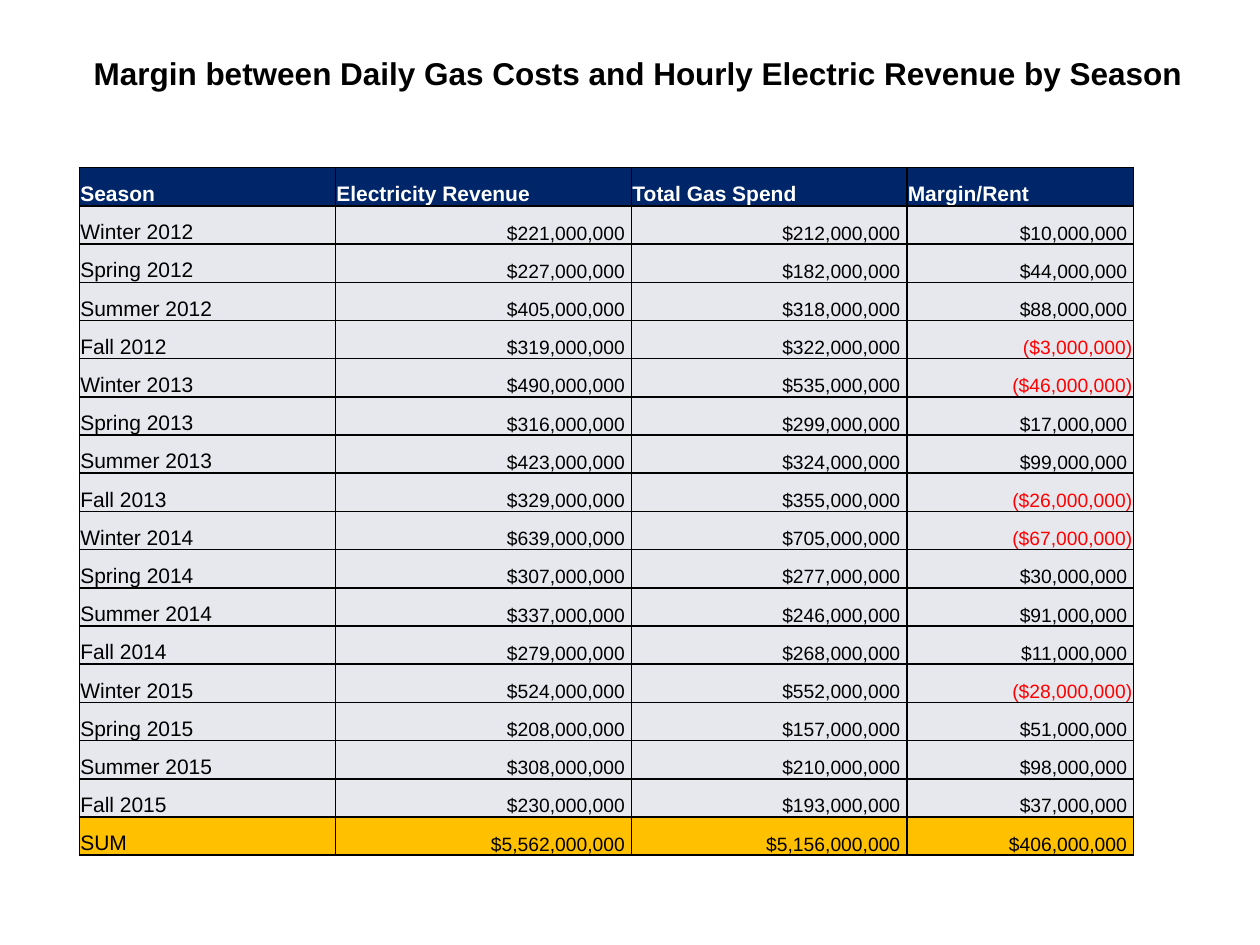
from dataclasses import dataclass

from lxml import etree
from pptx import Presentation
from pptx.dml.color import RGBColor
from pptx.enum.text import MSO_ANCHOR, PP_ALIGN
from pptx.oxml.ns import qn
from pptx.util import Cm, Pt

LEFT, CENTER, RIGHT = PP_ALIGN.LEFT, PP_ALIGN.CENTER, PP_ALIGN.RIGHT
TOP, BOTTOM = MSO_ANCHOR.TOP, MSO_ANCHOR.BOTTOM
BORDER_SIDES = ("a:lnL", "a:lnR", "a:lnT", "a:lnB")


@dataclass(frozen=True)
class Theme:
    font: str = "Arial"
    title_size: int = 18
    label_size: int = 12
    value_size: int = 11
    black: str = "000000"
    white: str = "FFFFFF"
    negative: str = "FF0000"
    header_fill: str = "00266A"
    body_fill: str = "E7E8EE"
    total_fill: str = "FFC000"


TITLE = "Margin between Daily Gas Costs and Hourly Electric Revenue by Season"
HEADERS = ("Season", "Electricity Revenue", "Total Gas Spend", "Margin/Rent")
COLUMN_WIDTHS = (5.16, 5.97, 5.55, 4.57)
ROW_HEIGHT = 0.77

# Season, then revenue, gas spend and margin in millions of dollars
SEASONS = (
    ("Winter 2012", 221, 212, 10),
    ("Spring 2012", 227, 182, 44),
    ("Summer 2012", 405, 318, 88),
    ("Fall 2012", 319, 322, -3),
    ("Winter 2013", 490, 535, -46),
    ("Spring 2013", 316, 299, 17),
    ("Summer 2013", 423, 324, 99),
    ("Fall 2013", 329, 355, -26),
    ("Winter 2014", 639, 705, -67),
    ("Spring 2014", 307, 277, 30),
    ("Summer 2014", 337, 246, 91),
    ("Fall 2014", 279, 268, 11),
    ("Winter 2015", 524, 552, -28),
    ("Spring 2015", 208, 157, 51),
    ("Summer 2015", 308, 210, 98),
    ("Fall 2015", 230, 193, 37),
)
TOTAL = ("SUM", 5562, 5156, 406)


def accounting(millions):
    """Format dollars with negatives in brackets and positives padded to match."""
    amount = f"${abs(millions) * 1_000_000:,}"
    return f"({amount})" if millions < 0 else f"{amount} "


class SlideBuilder:
    def __init__(self, slide, theme):
        self.s = slide
        self.theme = theme

    def set_text(self, tf, text, size, color, bold=False, align=LEFT):
        p = tf.paragraphs[0]
        p.text = text
        p.alignment = align
        p.font.name = self.theme.font
        p.font.size = Pt(size)
        p.font.bold = bold
        p.font.color.rgb = RGBColor.from_string(color)

    def title(self, text, left, top, width, height):
        tf = self.s.shapes.add_textbox(Cm(left), Cm(top), Cm(width), Cm(height)).text_frame
        tf.word_wrap = True
        tf.vertical_anchor = TOP
        tf.margin_left = tf.margin_right = 0
        self.set_text(tf, text, self.theme.title_size, self.theme.black, True, CENTER)

    def borders(self, cell):
        tc_pr = cell._tc.get_or_add_tcPr()
        for i, side in enumerate(BORDER_SIDES):
            ln = etree.Element(qn(side), w=str(Pt(1)))
            fill = etree.SubElement(ln, qn("a:solidFill"))
            etree.SubElement(fill, qn("a:srgbClr"), val=self.theme.black)
            tc_pr.insert(i, ln)

    def cell(self, cell, text, fill, size, color, bold=False, align=LEFT):
        cell.margin_left = cell.margin_right = cell.margin_top = Cm(0.02)
        cell.margin_bottom = 0
        cell.vertical_anchor = BOTTOM
        cell.fill.solid()
        cell.fill.fore_color.rgb = RGBColor.from_string(fill)
        self.borders(cell)
        self.set_text(cell.text_frame, text, size, color, bold, align)

    def amounts_row(self, cells, record, fill):
        t = self.theme
        label, *amounts = record
        label_cell, *amount_cells = cells
        self.cell(label_cell, label, fill, t.label_size, t.black)
        for cell, amount in zip(amount_cells, amounts):
            color = t.negative if amount < 0 else t.black
            self.cell(cell, accounting(amount), fill, t.value_size, color, align=RIGHT)

    def table(self, left, top):
        t = self.theme
        count = len(SEASONS) + 2
        table = self.s.shapes.add_table(
            count, len(HEADERS), Cm(left), Cm(top),
            Cm(sum(COLUMN_WIDTHS)), Cm(count * ROW_HEIGHT),
        ).table
        for column, width in zip(table.columns, COLUMN_WIDTHS):
            column.width = Cm(width)
        for row in table.rows:
            row.height = Cm(ROW_HEIGHT)

        header, *body, total = table.rows
        for cell, text in zip(header.cells, HEADERS):
            self.cell(cell, text, t.header_fill, t.label_size, t.white, bold=True)
        for row, record in zip(body, SEASONS):
            self.amounts_row(row.cells, record, t.body_fill)
        self.amounts_row(total.cells, TOTAL, t.total_fill)


def main():
    prs = Presentation()
    prs.slide_width, prs.slide_height = Cm(25.4), Cm(19.05)
    builder = SlideBuilder(prs.slides.add_slide(prs.slide_layouts[6]), Theme())
    builder.title(TITLE, 1.6, 0.97, 22.53, 1.9)
    builder.table(1.6, 3.38)
    prs.save("out.pptx")


if __name__ == "__main__":
    main()
